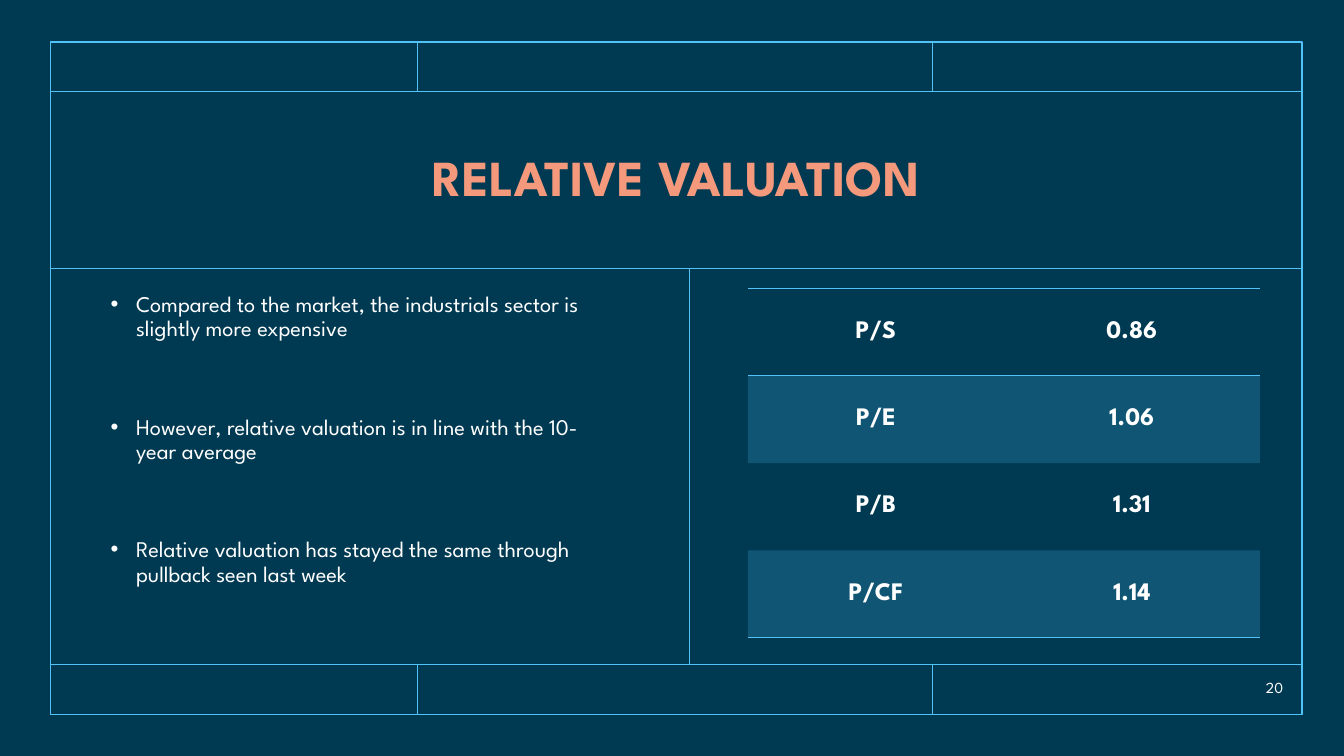
from typing import NamedTuple

from lxml import etree
from pptx import Presentation
from pptx import util as u
from pptx.dml.color import RGBColor
from pptx.enum import shapes, text
from pptx.oxml import ns

FONT = "League Spartan"
NAVY, SKY, CORAL, WHITE = "003A52", "51C3F9", "F4997C", "FFFFFF"
PLAIN_TABLE_STYLE = "{2D5ABB26-0587-4C30-8999-92F81FD0307C}"

LEFT, RIGHT = 1.27, 32.81
TOP, HEADER, TITLE_END, FOOTER, BOTTOM = 1.06, 2.31, 6.77, 16.74, 18.0
STRIP_DIVIDERS = (10.52, 23.5)
MIDDLE = 17.37
CONTENT_TOP, CONTENT_WIDTH, CONTENT_HEIGHT = 7.27, 12.9, 8.8


class Rule(NamedTuple):
    x1: float
    y1: float
    x2: float
    y2: float


class Ratio(NamedTuple):
    name: str
    value: str
    banded: bool
    borders: tuple[str, ...]


RULES = [
    *(Rule(x, y1, x, y2) for x in STRIP_DIVIDERS
      for y1, y2 in ((TOP, HEADER), (FOOTER, BOTTOM))),
    *(Rule(LEFT, y, RIGHT, y) for y in (HEADER, TITLE_END, FOOTER)),
    Rule(MIDDLE, TITLE_END, MIDDLE, FOOTER),
]
RATIOS = [
    Ratio("P/S", "0.86", False, ("lnT", "lnB")),
    Ratio("P/E", "1.06", True, ()),
    Ratio("P/B", "1.31", False, ()),
    Ratio("P/CF", "1.14", True, ("lnB",)),
]
POINTS = [
    "Compared to the market, the industrials sector is slightly more expensive",
    "However, relative valuation is in line with the 10-year average",
    "Relative valuation has stayed the same through pullback seen last week",
]


def colour(value: str) -> RGBColor:
    return RGBColor.from_string(value)


def add_element(parent, tag: str, **attributes: str):
    return etree.SubElement(parent, ns.qn(tag), attributes)


def write(frame, lines: list[str], *, size: float, ink: str = WHITE,
          bold: bool = False, align=text.PP_ALIGN.LEFT, spacing: float = 1.0,
          gap: float = 0, bullet: bool = False) -> None:
    """Fill a text frame with one paragraph per line; gap is in points."""
    frame.word_wrap = True
    for index, line in enumerate(lines):
        para = frame.paragraphs[0] if index == 0 else frame.add_paragraph()
        para.alignment = align
        para.line_spacing = spacing
        if index:
            para.space_before = u.Pt(gap)
        if bullet:
            properties = para._p.get_or_add_pPr()
            indent = u.Cm(0.64)
            properties.set("marL", str(indent))
            properties.set("indent", str(-indent))
            add_element(properties, "a:buFont", typeface="Arial")
            add_element(properties, "a:buChar", char="•")
        span = para.add_run()
        span.text = line
        span.font.name = FONT
        span.font.size = u.Pt(size)
        span.font.bold = bold
        span.font.color.rgb = colour(ink)


def add_text(page, left: float, top: float, width: float, height: float,
             lines: list[str], *, anchor=text.MSO_ANCHOR.MIDDLE, **style) -> None:
    box = page.shapes.add_textbox(u.Cm(left), u.Cm(top), u.Cm(width), u.Cm(height))
    box.text_frame.vertical_anchor = anchor
    write(box.text_frame, lines, **style)


def add_frame(page) -> None:
    frame = page.shapes.add_shape(
        shapes.MSO_SHAPE.RECTANGLE, u.Cm(LEFT), u.Cm(TOP),
        u.Cm(RIGHT - LEFT), u.Cm(BOTTOM - TOP))
    frame.shadow.inherit = False
    frame.fill.background()
    frame.line.color.rgb = colour(SKY)
    frame.line.width = u.Pt(1)


def add_rule(page, rule: Rule) -> None:
    line = page.shapes.add_connector(
        shapes.MSO_CONNECTOR.STRAIGHT, *(u.Cm(place) for place in rule))
    line.line.color.rgb = colour(SKY)
    line.line.width = u.Pt(1)
    add_element(line._element.spPr, "a:effectLst")


def format_cell(cell, ratio: Ratio) -> None:
    """Set the borders and the translucent band of one table cell."""
    properties = cell._tc.get_or_add_tcPr()
    for side in ratio.borders:
        border = add_element(properties, f"a:{side}", w=str(u.Pt(1)))
        add_element(add_element(border, "a:solidFill"), "a:srgbClr", val=SKY)
    if ratio.banded:
        cell.fill.solid()
        cell.fill.fore_color.rgb = colour(SKY)
        shade = properties.find(ns.qn("a:solidFill")).find(ns.qn("a:srgbClr"))
        add_element(shade, "a:alpha", val="20000")
    else:
        cell.fill.background()


def add_ratio_table(page) -> None:
    table = page.shapes.add_table(
        len(RATIOS), 2, u.Cm(18.85), u.Cm(CONTENT_TOP),
        u.Cm(CONTENT_WIDTH), u.Cm(CONTENT_HEIGHT)).table
    table.first_row = table.horz_banding = False
    table._tbl.tblPr.find(ns.qn("a:tableStyleId")).text = PLAIN_TABLE_STYLE
    for row, ratio in zip(table.rows, RATIOS):
        for cell, label in zip(row.cells, (ratio.name, ratio.value)):
            cell.vertical_anchor = text.MSO_ANCHOR.MIDDLE
            write(cell.text_frame, [label], size=18, bold=True,
                  align=text.PP_ALIGN.CENTER)
            format_cell(cell, ratio)


def main() -> None:
    deck = Presentation()
    deck.slide_width, deck.slide_height = u.Cm(33.87), u.Cm(19.05)
    page = deck.slides.add_slide(deck.slide_layouts[6])
    page.background.fill.solid()
    page.background.fill.fore_color.rgb = colour(NAVY)

    add_frame(page)
    for rule in RULES:
        add_rule(page, rule)
    add_text(page, LEFT, HEADER, RIGHT - LEFT, TITLE_END - HEADER,
             ["RELATIVE VALUATION"], size=36, ink=CORAL, bold=True,
             align=text.PP_ALIGN.CENTER, spacing=0.9)
    add_text(page, 2.54, CONTENT_TOP, CONTENT_WIDTH, CONTENT_HEIGHT, POINTS,
             anchor=text.MSO_ANCHOR.TOP, size=16, spacing=0.9, gap=53, bullet=True)
    add_text(page, 30.25, 16.95, 2.34, 0.76, ["20"], size=11,
             align=text.PP_ALIGN.RIGHT)
    add_ratio_table(page)
    deck.save("out.pptx")


if __name__ == "__main__":
    main()
